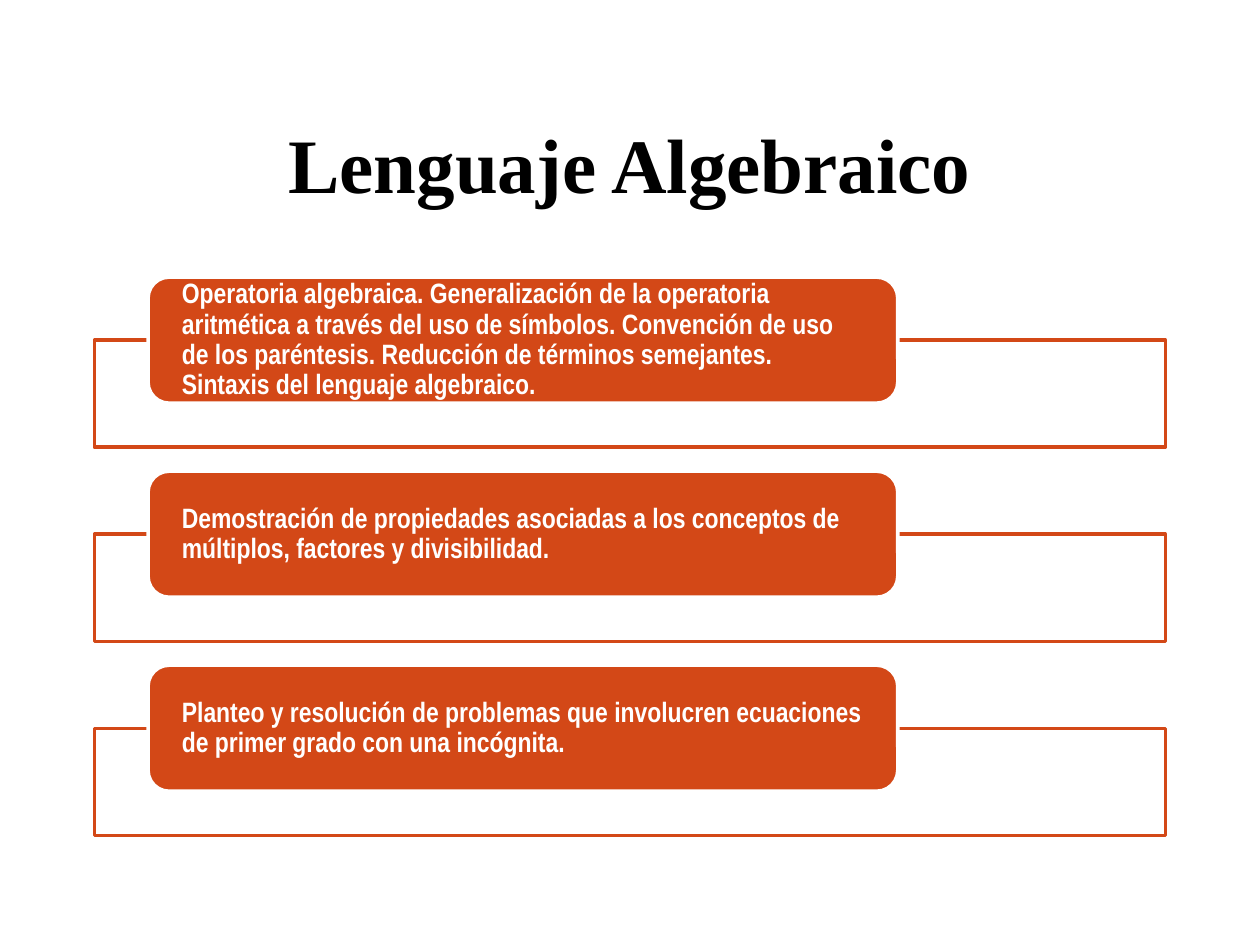
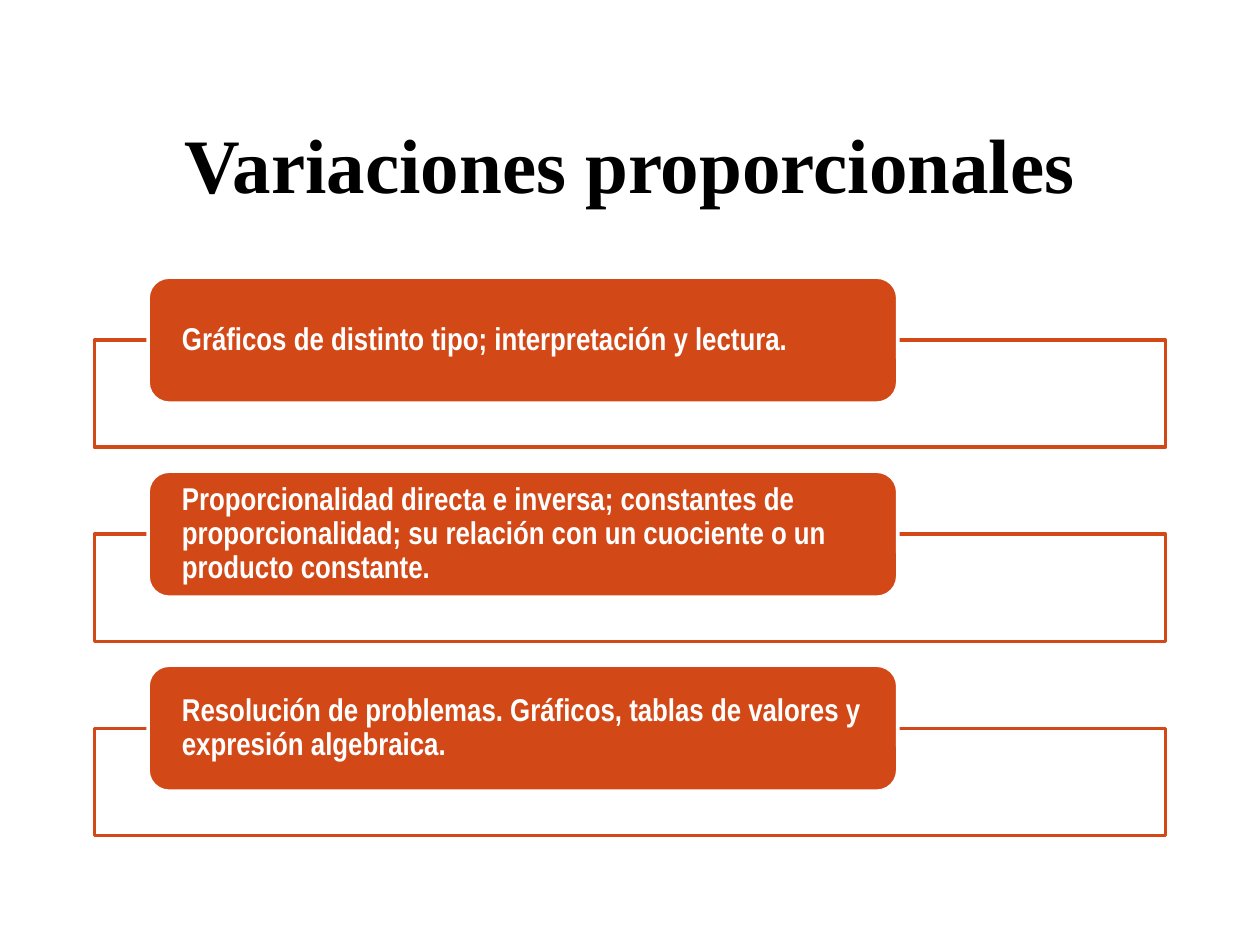
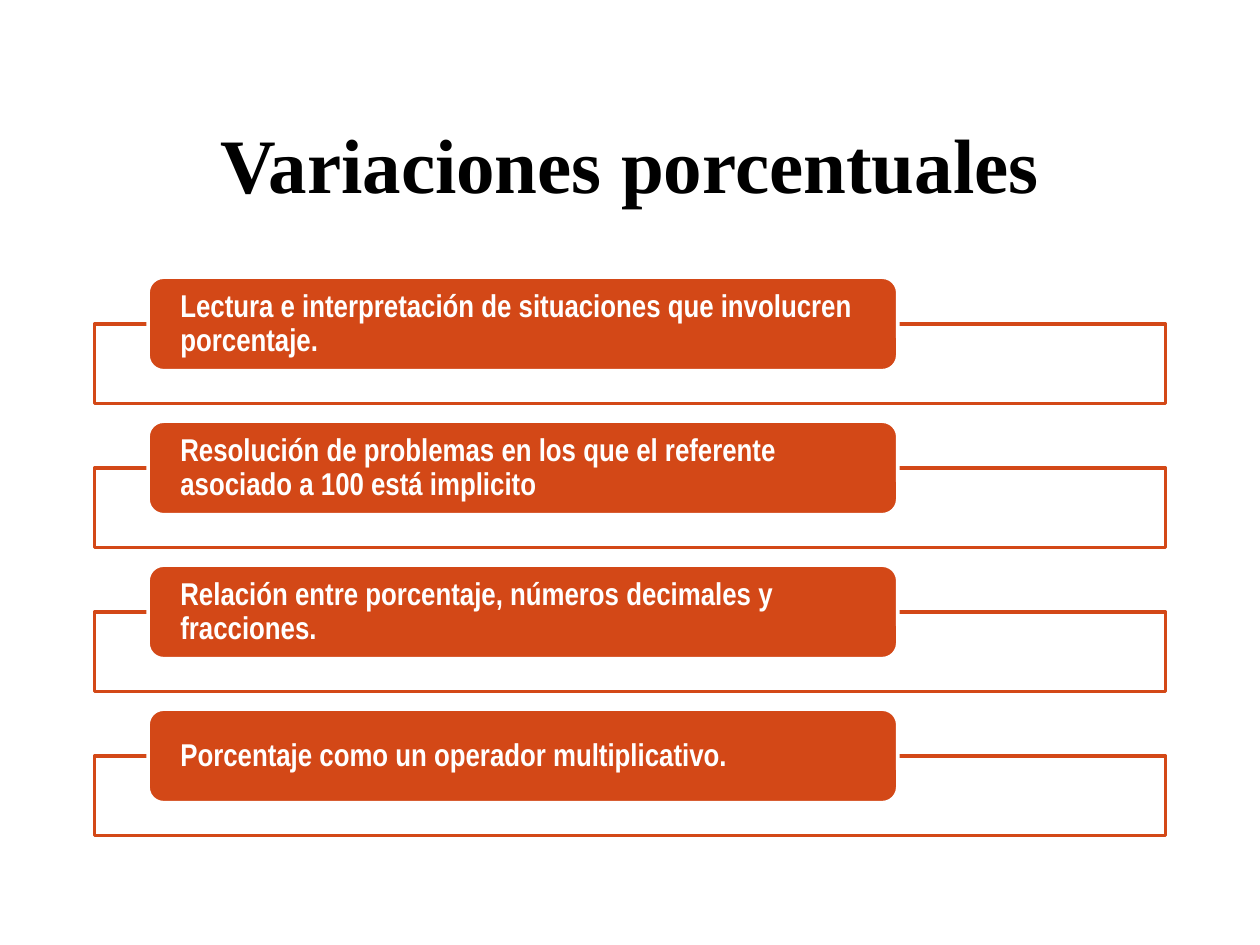
import dataclasses

import lxml.etree
import pptx
import pptx.dml.color
import pptx.enum.shapes
import pptx.enum.text
import pptx.oxml.ns
import pptx.util

SHAPE = pptx.enum.shapes.MSO_SHAPE
ALIGN = pptx.enum.text.PP_ALIGN
MIDDLE = pptx.enum.text.MSO_ANCHOR.MIDDLE


@dataclasses.dataclass(frozen=True)
class Theme:
    accent: str = "D34817"
    paper: str = "FFFFFF"
    ink: str = "000000"
    head_font: str = "Times New Roman"
    body_font: str = "Arial Narrow"
    head_size: int = 44
    body_size: int = 18
    small_size: int = 16
    rule: int = 2
    opacity: int = 90


def color(code):
    return pptx.dml.color.RGBColor.from_string(code)


def write(shape, text, *, font, size, ink, align, inset=(0.1, 0.05), lead=1.0):
    """Fill a shape with one bold paragraph, centred from top to bottom."""
    frame = shape.text_frame
    frame.word_wrap = True
    frame.vertical_anchor = MIDDLE
    side, edge = (pptx.util.Inches(gap) for gap in inset)
    frame.margin_left = frame.margin_right = side
    frame.margin_top = frame.margin_bottom = edge
    para = frame.paragraphs[0]
    para.alignment = align
    para.line_spacing = lead
    run = para.add_run()
    run.text = text
    run.font.name = font
    run.font.size = pptx.util.Pt(size)
    run.font.bold = True
    run.font.color.rgb = color(ink)


class Deck:
    """Style, grid and current slide; places are in columns and rows."""

    COLS, ROWS = 40, 30
    # List area: left, top, width, height
    AREA = (3, 8.8, 34, 17.72)
    # Frame height and step from item to item, as shares of the pill height
    FRAME, STEP = 0.85, 1.54
    # Pill indent and width, as shares of the frame width
    INDENT, WIDTH = 0.05, 0.7

    def __init__(self, theme):
        self.theme = theme
        self.file = pptx.Presentation()
        self.file.slide_width = pptx.util.Inches(10)
        self.file.slide_height = pptx.util.Inches(7.5)
        self.slide = None

    def place(self, left, top, width, height):
        col = self.file.slide_width / self.COLS
        row = self.file.slide_height / self.ROWS
        return [round(n * unit) for n, unit in
                zip((left, top, width, height), (col, row, col, row))]

    def page(self, title):
        self.slide = self.file.slides.add_slide(self.file.slide_layouts[6])
        self.title(title)

    def title(self, text):
        box = self.slide.shapes.add_textbox(*self.place(3, 2.67, 34, 5))
        write(box, text, font=self.theme.head_font, size=self.theme.head_size,
              ink=self.theme.ink, align=ALIGN.CENTER)

    def block(self, kind, spot, fill, line):
        shape = self.slide.shapes.add_shape(kind, *self.place(*spot))
        shape.shadow.inherit = False
        shape.fill.solid()
        shape.fill.fore_color.rgb = color(fill)
        shape.line.color.rgb = color(line)
        shape.line.width = pptx.util.Pt(self.theme.rule)
        return shape

    def frame(self, *spot):
        shape = self.block(SHAPE.RECTANGLE, spot,
                           self.theme.paper, self.theme.accent)
        # Let the background show slightly through the fill
        qn = pptx.oxml.ns.qn
        tone = shape.fill._xPr.find(qn("a:solidFill")).find(qn("a:srgbClr"))
        lxml.etree.SubElement(tone, qn("a:alpha"),
                              val=str(self.theme.opacity * 1000))

    def pill(self, text, size, *spot):
        shape = self.block(SHAPE.ROUNDED_RECTANGLE, spot,
                           self.theme.accent, self.theme.paper)
        write(shape, text, font=self.theme.body_font, size=size,
              ink=self.theme.paper, align=ALIGN.LEFT,
              inset=(0.22, 0), lead=0.9)

    def items(self, texts, size):
        """Stack pills over frames so that they fill the list area."""
        left, top, width, height = self.AREA
        pill = height / (0.5 + self.FRAME + self.STEP * (len(texts) - 1))
        for i, text in enumerate(texts):
            y = top + i * self.STEP * pill
            self.frame(left, y + pill / 2, width, self.FRAME * pill)
            self.pill(text, size, left + self.INDENT * width, y,
                      self.WIDTH * width, pill)


def main():
    theme = Theme()
    deck = Deck(theme)

    # Title, type size and list of each slide
    pages = [
        ("Lenguaje Algebraico", theme.small_size, [
            "Operatoria algebraica. Generalización de la operatoria "
            "aritmética a través del uso de símbolos. Convención de uso de "
            "los paréntesis. Reducción de términos semejantes. Sintaxis del "
            "lenguaje algebraico.",
            "Demostración de propiedades asociadas a los conceptos de "
            "múltiplos, factores y divisibilidad.",
            "Planteo y resolución de problemas que involucren ecuaciones de "
            "primer grado con una incógnita.",
        ]),
        ("Variaciones proporcionales", theme.body_size, [
            "Gráficos de distinto tipo; interpretación y lectura.",
            "Proporcionalidad directa e inversa; constantes de "
            "proporcionalidad; su relación con un cuociente o un producto "
            "constante.",
            "Resolución de problemas. Gráficos, tablas de valores y "
            "expresión algebraica.",
        ]),
        ("Variaciones porcentuales", theme.body_size, [
            "Lectura e interpretación de situaciones que involucren "
            "porcentaje.",
            "Resolución de problemas en los que el referente asociado a 100 "
            "está implicito",
            "Relación entre porcentaje, números decimales y fracciones.",
            "Porcentaje como un operador multiplicativo.",
        ]),
    ]
    for title, size, texts in pages:
        deck.page(title)
        deck.items(texts, size)

    deck.file.save("out.pptx")


if __name__ == "__main__":
    main()
